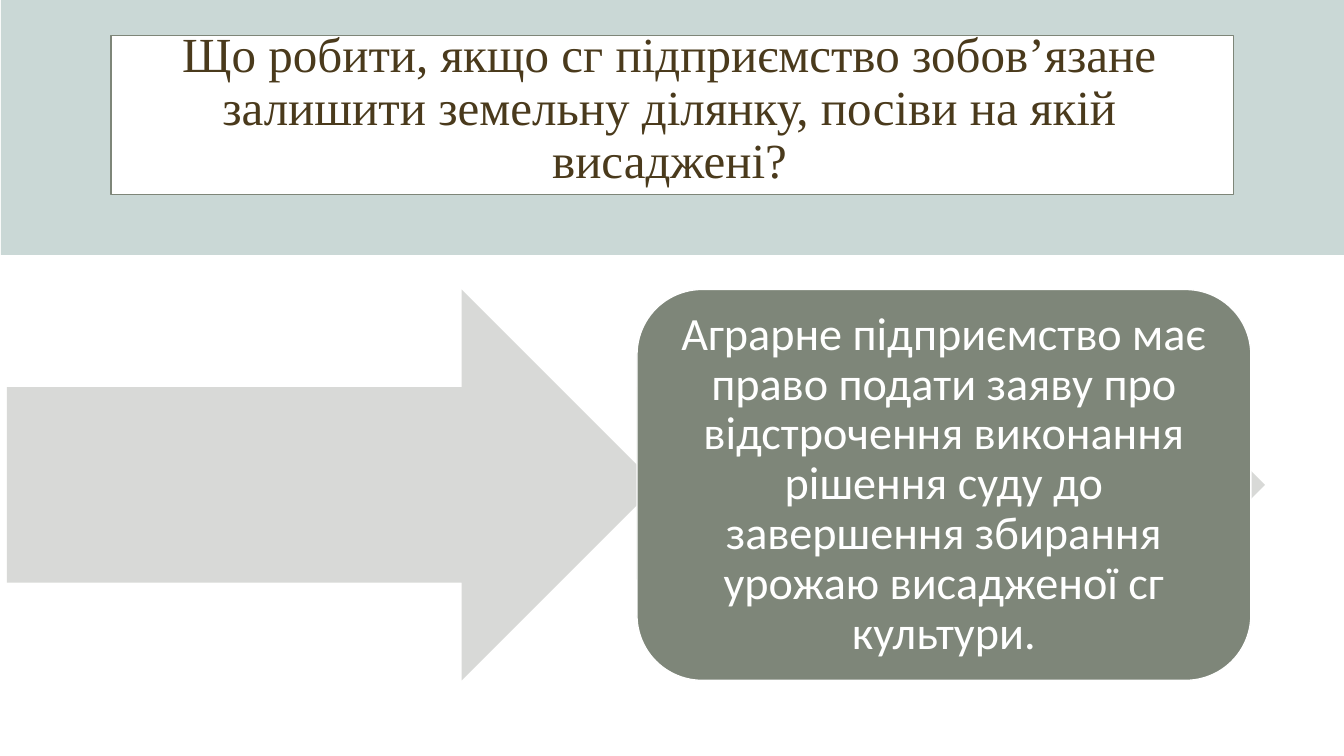
from dataclasses import dataclass

from pptx import Presentation
from pptx.dml.color import RGBColor
from pptx.enum import shapes, text
from pptx.util import Pt


@dataclass(frozen=True)
class Theme:
    band: RGBColor = RGBColor.from_string("CAD8D6")
    paper: RGBColor = RGBColor.from_string("FFFFFF")
    accent: RGBColor = RGBColor.from_string("7E8679")
    arrow: RGBColor = RGBColor.from_string("D8D9D7")
    title_ink: RGBColor = RGBColor.from_string("4A3A1C")
    title_font: str = "Times New Roman"
    body_font: str = "Calibri"
    title_size: int = 35
    body_size: int = 33
    line_width: int = 1


THEME = Theme()
TITLE = ("Що робити, якщо сг підприємство зобов’язане залишити земельну "
         "ділянку, посіви на якій висаджені?")
ANSWER = ("Аграрне підприємство має право подати заяву про відстрочення "
          "виконання рішення суду до завершення збирання урожаю висадженої "
          "сг культури.")


def add_filled(slide, kind, box, fill, outline=None):
    shape = slide.shapes.add_shape(kind, *map(Pt, box))
    shape.shadow.inherit = False
    shape.fill.solid()
    shape.fill.fore_color.rgb = fill
    if outline is None:
        shape.line.fill.background()
    else:
        shape.line.color.rgb = outline
        shape.line.width = Pt(THEME.line_width)
    return shape


def write_centred(shape, wording, font_name, size, colour):
    frame = shape.text_frame
    frame.word_wrap = True
    frame.vertical_anchor = text.MSO_ANCHOR.MIDDLE
    paragraph = frame.paragraphs[0]
    paragraph.text = wording
    paragraph.alignment = text.PP_ALIGN.CENTER
    paragraph.line_spacing = 0.9
    paragraph.font.name = font_name
    paragraph.font.size = Pt(size)
    paragraph.font.color.rgb = colour
    return frame


def add_header(slide, left, top, width, height):
    """Place the tinted band, the framed panel and the question on it."""
    rectangle = shapes.MSO_SHAPE.RECTANGLE
    add_filled(slide, rectangle, (left, top, width, height), THEME.band)
    panel = (left + 78.5, top + 25.2, 802, 113.8)
    add_filled(slide, rectangle, panel, THEME.paper, THEME.accent)
    question = slide.shapes.add_textbox(
        Pt(left + 76.3), Pt(top + 22.3), Pt(802.8), Pt(111.6))
    write_centred(question, TITLE, THEME.title_font, THEME.title_size,
                  THEME.title_ink)


def add_answer_flow(slide, left, top, width, height):
    """Place two arrows in a row, with the answer card over the second."""
    arrow = shapes.MSO_SHAPE.RIGHT_ARROW
    card_left = left + 450
    add_filled(slide, arrow, (left, top, 464.4, height), THEME.arrow)
    add_filled(slide, arrow,
               (card_left, top, left + width - card_left, height), THEME.arrow)
    card = add_filled(slide, shapes.MSO_SHAPE.ROUNDED_RECTANGLE,
                      (card_left, top, 438.5, height),
                      THEME.accent, THEME.paper)
    frame = write_centred(card, ANSWER, THEME.body_font, THEME.body_size,
                          THEME.paper)
    frame.margin_left = frame.margin_right = Pt(10)
    frame.margin_top = frame.margin_bottom = Pt(10)


def main():
    deck = Presentation()
    deck.slide_width, deck.slide_height = Pt(960), Pt(540)
    slide = deck.slides.add_slide(deck.slide_layouts[6])
    add_header(slide, 0.7, 0, 959.3, 182)
    add_answer_flow(slide, 5, 206.8, 898.6, 279.2)
    deck.save("out.pptx")


if __name__ == "__main__":
    main()
